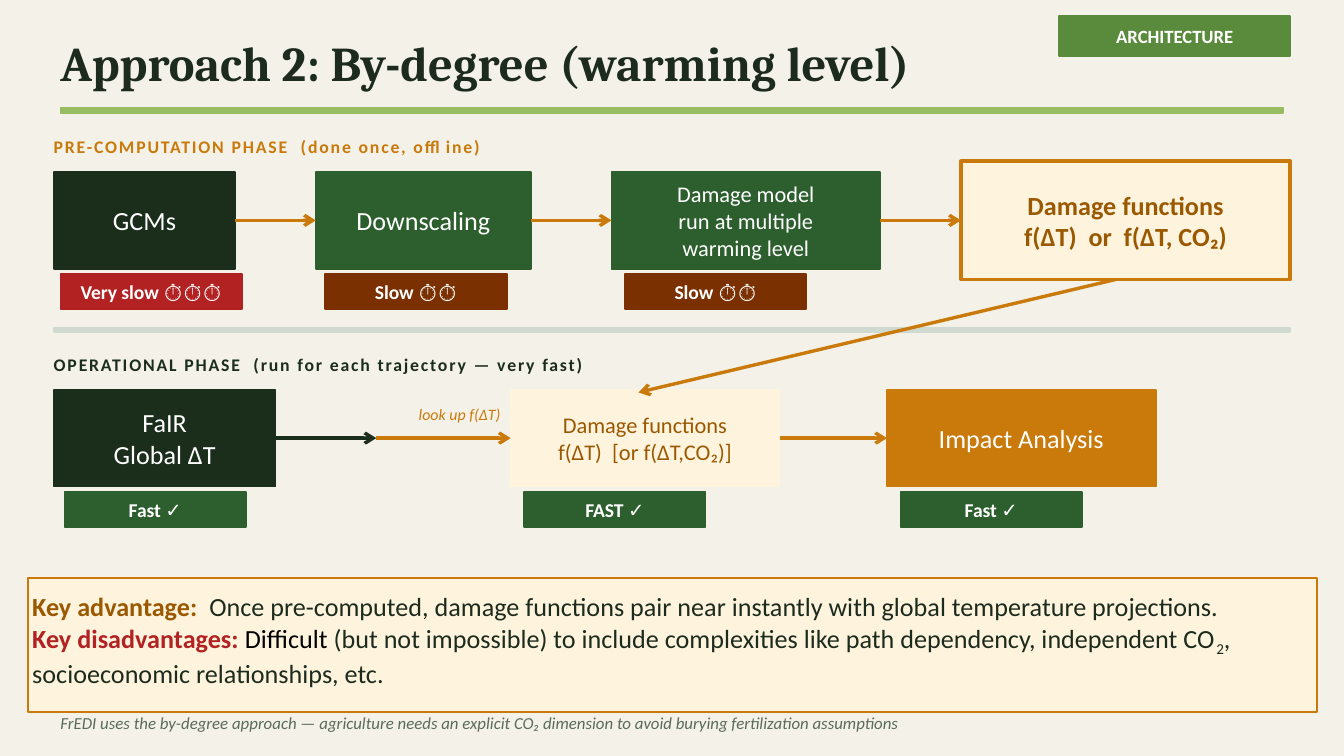
from dataclasses import dataclass

from lxml import etree
from pptx import Presentation
from pptx.dml.color import RGBColor
from pptx.enum.shapes import MSO_CONNECTOR, MSO_SHAPE
from pptx.enum.text import MSO_ANCHOR, PP_ALIGN
from pptx.oxml.ns import qn
from pptx.util import Inches, Pt

RECTANGLE = MSO_SHAPE.RECTANGLE
STRAIGHT = MSO_CONNECTOR.STRAIGHT
MIDDLE = MSO_ANCHOR.MIDDLE
LEFT, CENTER = PP_ALIGN.LEFT, PP_ALIGN.CENTER
RIGHT_SIDE, LEFT_SIDE = 3, 1

PAPER = RGBColor(0xF4, 0xF1, 0xE8)
INK = RGBColor(0x1C, 0x2B, 0x1D)
BLACK = RGBColor(0, 0, 0)
WHITE = RGBColor(0xFF, 0xFF, 0xFF)
DARK = RGBColor(0x1A, 0x2E, 0x1B)
GREEN = RGBColor(0x2C, 0x5F, 0x2D)
TAG_GREEN = RGBColor(0x5A, 0x8A, 0x3C)
RULE_GREEN = RGBColor(0x97, 0xBC, 0x62)
DIVIDER = RGBColor(0xD0, 0xD9, 0xD0)
MUTED = RGBColor(0x5A, 0x6B, 0x5B)
AMBER = RGBColor(0xC9, 0x7A, 0x0A)
BROWN = RGBColor(0x9A, 0x58, 0x00)
RUST = RGBColor(0x7A, 0x30, 0x00)
RED = RGBColor(0xB2, 0x22, 0x22)
CREAM = RGBColor(0xFE, 0xF3, 0xDC)


@dataclass
class Box:
    left: float
    top: float
    width: float
    height: float

    def lengths(self):
        return [Inches(v) for v in (self.left, self.top, self.width, self.height)]


@dataclass
class Stage:
    left: float
    width: float
    lines: list
    fill: RGBColor
    size: float = 14
    color: RGBColor = WHITE
    bold: bool = False
    line: RGBColor = None
    line_width: float = 1
    extra: float = 0
    chip: tuple = None


def add_span(para, text, color, size, name="Calibri", spacing=0, lowered=False, **styles):
    span = para.add_run()
    span.text = text
    formats = {"name": name, "size": Pt(size), **styles}
    for key, value in formats.items():
        setattr(span.font, key, value)
    span.font.color.rgb = color
    if spacing:
        span.font._element.set("spc", str(spacing * 100))
    if lowered:
        span.font._element.set("baseline", "-25000")


def prepare_frame(shape, inset=0):
    frame = shape.text_frame
    formats = {"word_wrap": True, "vertical_anchor": MIDDLE}
    for side in ("left", "top", "right", "bottom"):
        formats[f"margin_{side}"] = Inches(inset)
    for key, value in formats.items():
        setattr(frame, key, value)
    return frame


def write_lines(shape, lines, align, inset=0, **styles):
    frame = prepare_frame(shape, inset)
    for index, line in enumerate(lines):
        para = frame.add_paragraph() if index else frame.paragraphs[0]
        para.alignment = align
        add_span(para, line, **styles)


def add_label(page, box, text, align=LEFT, **styles):
    write_lines(page.shapes.add_textbox(*box.lengths()), [text], align, **styles)


def add_block(page, box, fill, line=None, line_width=1):
    block = page.shapes.add_shape(RECTANGLE, *box.lengths())
    block.shadow.inherit = False
    block.fill.solid()
    block.fill.fore_color.rgb = fill
    block.line.color.rgb = line or fill
    block.line.width = Pt(line_width)
    return block


def add_arrow(page, start, end, color=AMBER, source=None, target=None):
    arrow = page.shapes.add_connector(STRAIGHT, *[Inches(v) for v in (*start, *end)])
    arrow.line.color.rgb = color
    arrow.line.width = Pt(1.8)
    etree.SubElement(arrow.line._get_or_add_ln(), qn("a:tailEnd"), type="arrow")
    etree.SubElement(arrow._element.spPr, qn("a:effectLst"))
    if source is not None:
        arrow.begin_connect(source, RIGHT_SIDE)
    if target is not None:
        arrow.end_connect(target, LEFT_SIDE)


def add_header(page, box):
    tag = add_block(page, Box(box.left + 7.43, box.top - 0.03, 1.72, 0.3), TAG_GREEN)
    write_lines(tag, ["ARCHITECTURE"], CENTER, size=10, color=WHITE, bold=True)
    add_label(page, Box(box.left, box.top, box.width, 0.62),
              "Approach 2: By-degree (warming level)",
              name="Cambria", size=26, color=INK, bold=True)
    add_block(page, Box(box.left, box.top + 0.65, box.width, 0.04), RULE_GREEN)


def add_phase(page, box, title, color, stages):
    add_label(page, Box(box.left, box.top, box.width, 0.28), title,
              size=9.5, color=color, bold=True, spacing=1)
    blocks = []
    for stage in stages:
        left = box.left + stage.left
        place = Box(left, box.top + 0.33 - stage.extra, stage.width, 0.72 + 2 * stage.extra)
        block = add_block(page, place, stage.fill, stage.line, stage.line_width)
        write_lines(block, stage.lines, CENTER, inset=0.06,
                    size=stage.size, color=stage.color, bold=stage.bold)
        blocks.append(block)
        if stage.chip:
            offset, text, fill = stage.chip
            chip = add_block(page, Box(left + offset, box.top + 1.09, 1.35, 0.26), fill)
            write_lines(chip, [text], CENTER, size=10.5, color=WHITE, bold=True)
    return blocks


def add_precomputation(page, box):
    stages = [
        Stage(0, 1.35, ["GCMs"], DARK, chip=(0.05, "Very slow ⏱⏱⏱", RED)),
        Stage(1.95, 1.6, ["Downscaling"], GREEN, chip=(0.07, "Slow ⏱⏱", RUST)),
        Stage(4.15, 2, ["Damage model", "run at multiple", "warming level"], GREEN,
              size=12, chip=(0.1, "Slow ⏱⏱", RUST)),
        Stage(6.75, 2.45, ["Damage functions", "f(ΔT)  or  f(ΔT, CO₂)"], CREAM,
              color=BROWN, bold=True, line=AMBER, line_width=2, extra=0.08),
    ]
    blocks = add_phase(page, box, "PRE-COMPUTATION PHASE  (done once, offline)", AMBER, stages)
    for source, target in zip(blocks, blocks[1:]):
        add_arrow(page, (0, 0), (0, 0), source=source, target=target)


def add_operation(page, box):
    stages = [
        Stage(0, 1.65, ["FaIR", "Global ΔT"], DARK, chip=(0.08, "Fast ✓", GREEN)),
        Stage(3.4, 2, ["Damage functions", "f(ΔT)  [or f(ΔT,CO₂)]"], CREAM,
              size=12, color=BROWN, chip=(0.1, "FAST ✓", GREEN)),
        Stage(6.2, 2, ["Impact Analysis"], AMBER, chip=(0.1, "Fast ✓", GREEN)),
    ]
    climate, damage, impact = add_phase(
        page, box, "OPERATIONAL PHASE  (run for each trajectory — very fast)", DARK, stages)
    lookup = (box.left + 2.4, box.top + 0.69)
    add_arrow(page, lookup, lookup, DARK, source=climate)
    add_arrow(page, lookup, lookup, target=damage)
    add_arrow(page, lookup, lookup, source=damage, target=impact)
    add_label(page, Box(box.left + 2.42, box.top + 0.38, 1.2, 0.26), "look up f(ΔT)",
              CENTER, size=8.5, color=AMBER, italic=True)


def add_takeaways(page, box):
    panel = add_block(page, box, CREAM, AMBER)
    frame = prepare_frame(panel, 0.03)
    frame.margin_bottom = Inches(0.11)
    para = frame.paragraphs[0]
    para.alignment = LEFT
    add_span(para, "Key advantage:  ", BROWN, 14, bold=True)
    add_span(para, "Once pre-computed, damage functions pair near instantly "
             "with global temperature projections.", INK, 14)
    para.add_line_break()
    add_span(para, "Key disadvantages: ", RED, 14, bold=True)
    add_span(para, "Difficult", BLACK, 14)
    add_span(para, " (but not impossible) to include complexities like "
             "path dependency, independent CO", INK, 14)
    add_span(para, "2", INK, 14, lowered=True)
    add_span(para, ", socioeconomic relationships, etc.", INK, 14)


def main():
    deck = Presentation()
    deck.slide_width = Inches(10)
    deck.slide_height = deck.slide_width * 9 // 16
    page = deck.slides.add_slide(deck.slide_layouts[6])
    page.background.fill.solid()
    page.background.fill.fore_color.rgb = PAPER

    add_header(page, Box(0.45, 0.15, 9.1, 0.69))
    add_precomputation(page, Box(0.4, 0.95, 6, 1.35))
    add_block(page, Box(0.4, 2.44, 9.2, 0.03), DIVIDER)
    add_operation(page, Box(0.4, 2.57, 7.5, 1.35))
    add_takeaways(page, Box(0.21, 4.3, 9.59, 1))
    add_label(page, Box(0.45, 5.22, 9.1, 0.32),
              "FrEDI uses the by-degree approach — agriculture needs an explicit CO₂ "
              "dimension to avoid burying fertilization assumptions",
              size=9, color=MUTED, italic=True)
    add_arrow(page, (8.3, 2.08), (4.75, 2.92))
    deck.save("out.pptx")


if __name__ == "__main__":
    main()
